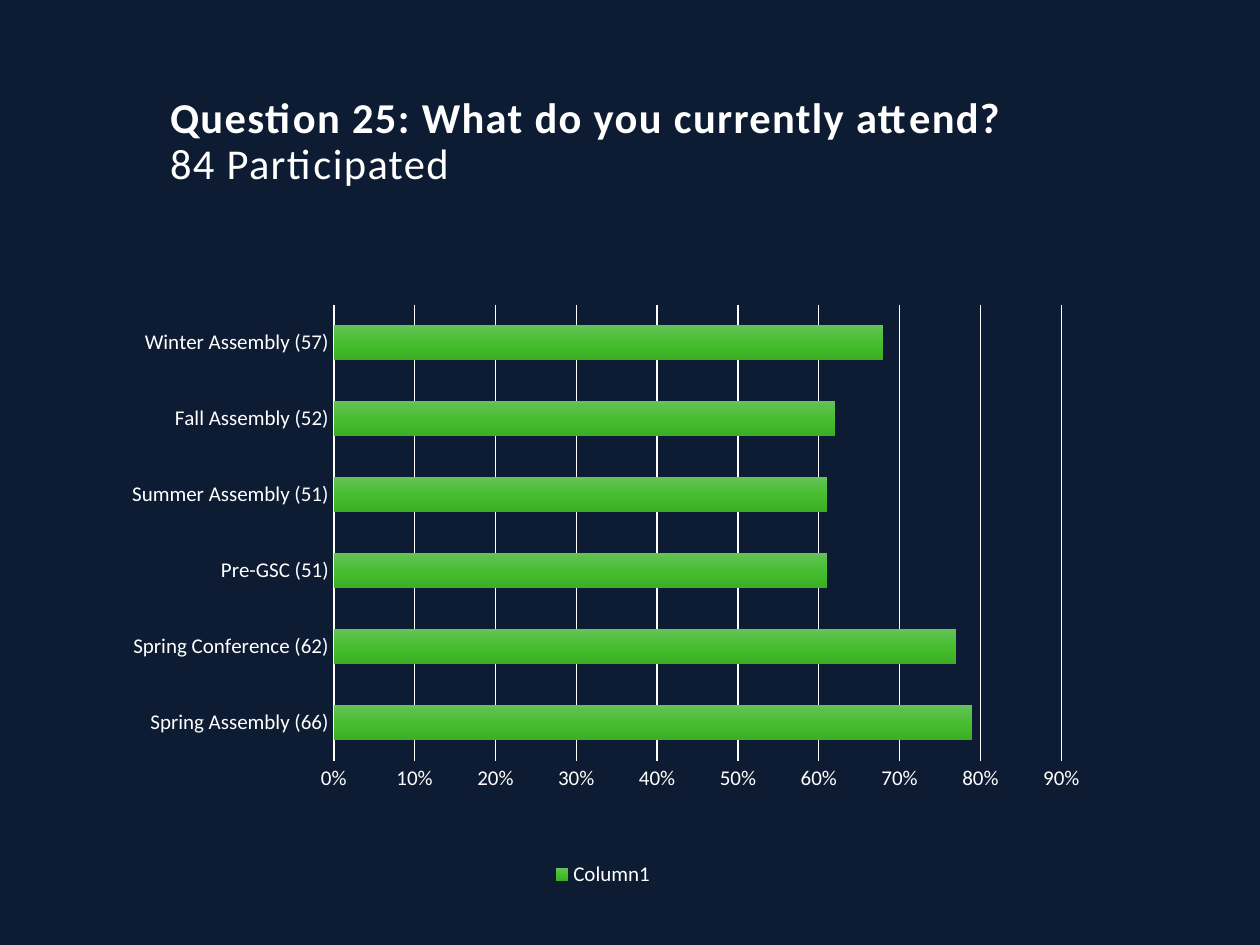
from copy import deepcopy

from lxml import etree
from pptx import Presentation
from pptx import util as u
from pptx.chart.data import CategoryChartData
from pptx.dml.color import RGBColor
from pptx.enum import chart as charts, text
from pptx.oxml.ns import qn

FONT, WHITE, NAVY = "Calibri", "FFFFFF", "0D1C32"
GREENS = [(0, "64C258"), (0.5, "47BE30"), (1, "3BAF24")]
ATTENDANCE = {
    "Spring Assembly (66)": 0.79,
    "Spring Conference (62)": 0.77,
    "Pre-GSC (51)": 0.61,
    "Summer Assembly (51)": 0.61,
    "Fall Assembly (52)": 0.62,
    "Winter Assembly (57)": 0.68,
}


def colour(hex_code):
    return RGBColor.from_string(hex_code)


def style_font(font, size):
    font.name, font.size = FONT, u.Pt(size)
    font.color.rgb = colour(WHITE)


def style_line(line, width):
    line.color.rgb = colour(WHITE)
    line.width = u.Pt(width)


def add_title(page, box, question, participation):
    title = page.shapes.title
    title.left, title.top, title.width, title.height = box
    frame = title.text_frame
    frame.text = f"{question}\v{participation}"
    frame.word_wrap = True
    frame.auto_size = text.MSO_AUTO_SIZE.NONE
    frame.vertical_anchor = text.MSO_ANCHOR.BOTTOM
    frame.margin_bottom = u.Inches(0.42)
    para = frame.paragraphs[0]
    para.alignment = text.PP_ALIGN.LEFT
    para.line_spacing = 0.9
    for span, bold in zip(para.runs, (True, False)):
        style_font(span.font, 24.3)
        span.font.bold = bold
        span.font._element.set("spc", "80")


def fill_gradient(series, stops):
    """Fill the bars from top to bottom through any number of stops."""
    fill = series.format.fill
    fill.gradient()
    fill.gradient_angle = 270
    stop_list = next(series._element.iter(qn("a:gsLst")))
    for _ in range(len(stops) - len(stop_list)):
        stop_list.append(deepcopy(stop_list[0]))
    for stop, (position, hex_code) in zip(fill.gradient_stops, stops):
        stop.position = position
        stop.color.rgb = colour(hex_code)


def place_plot(chart, **shares):
    """Fix the inner plot area by shares of the chart's size."""
    area = next(chart._chartSpace.iter(qn("c:plotArea")))
    for old in area.findall(qn("c:layout")):
        area.remove(old)
    layout = etree.Element(qn("c:layout"))
    manual = etree.SubElement(layout, qn("c:manualLayout"))
    settings = {"layoutTarget": "inner", "xMode": "edge", "yMode": "edge", **shares}
    for name, value in settings.items():
        etree.SubElement(manual, qn(f"c:{name}")).set("val", str(value))
    area.insert(0, layout)


def add_attendance_chart(page, box):
    data = CategoryChartData(number_format="0%")
    data.categories = list(ATTENDANCE)
    data.add_series("Column1", list(ATTENDANCE.values()))
    chart = page.shapes.add_chart(charts.XL_CHART_TYPE.BAR_CLUSTERED, *box, data).chart
    chart.has_title = False
    style_font(chart.font, 10)

    plot = chart.plots[0]
    plot.gap_width, plot.overlap = 115, -20
    plot.vary_by_categories = False
    fill_gradient(plot.series[0], GREENS)
    place_plot(chart, x=0.23, y=0.06, w=0.73, h=0.73)

    for axis in (chart.category_axis, chart.value_axis):
        axis.major_tick_mark = axis.minor_tick_mark = charts.XL_TICK_MARK.NONE
        style_font(axis.tick_labels.font, 12)
    style_line(chart.category_axis.format.line, 1)

    values = chart.value_axis
    values.minimum_scale, values.maximum_scale, values.major_unit = 0, 0.9, 0.1
    values.tick_labels.number_format = "0%"
    values.tick_labels.number_format_is_linked = False
    values.format.line.fill.background()
    style_line(values.major_gridlines.format.line, 0.75)

    chart.has_legend = True
    chart.legend.position = charts.XL_LEGEND_POSITION.BOTTOM
    chart.legend.include_in_layout = False
    style_font(chart.legend.font, 12)


def main():
    deck = Presentation()
    deck.slide_width, deck.slide_height = u.Inches(10), u.Inches(7.5)
    page = deck.slides.add_slide(deck.slide_layouts.get_by_name("Title Only"))
    page.background.fill.solid()
    page.background.fill.fore_color.rgb = colour(NAVY)

    add_title(page, [u.Inches(n) for n in (1.25, 0.42, 7.5, 1.5)],
              "Question 25: What do you currently attend?", "84 Participated")
    add_attendance_chart(page, [u.Inches(n) for n in (0.83, 2.12, 7.91, 4.96)])
    deck.save("out.pptx")


if __name__ == "__main__":
    main()
